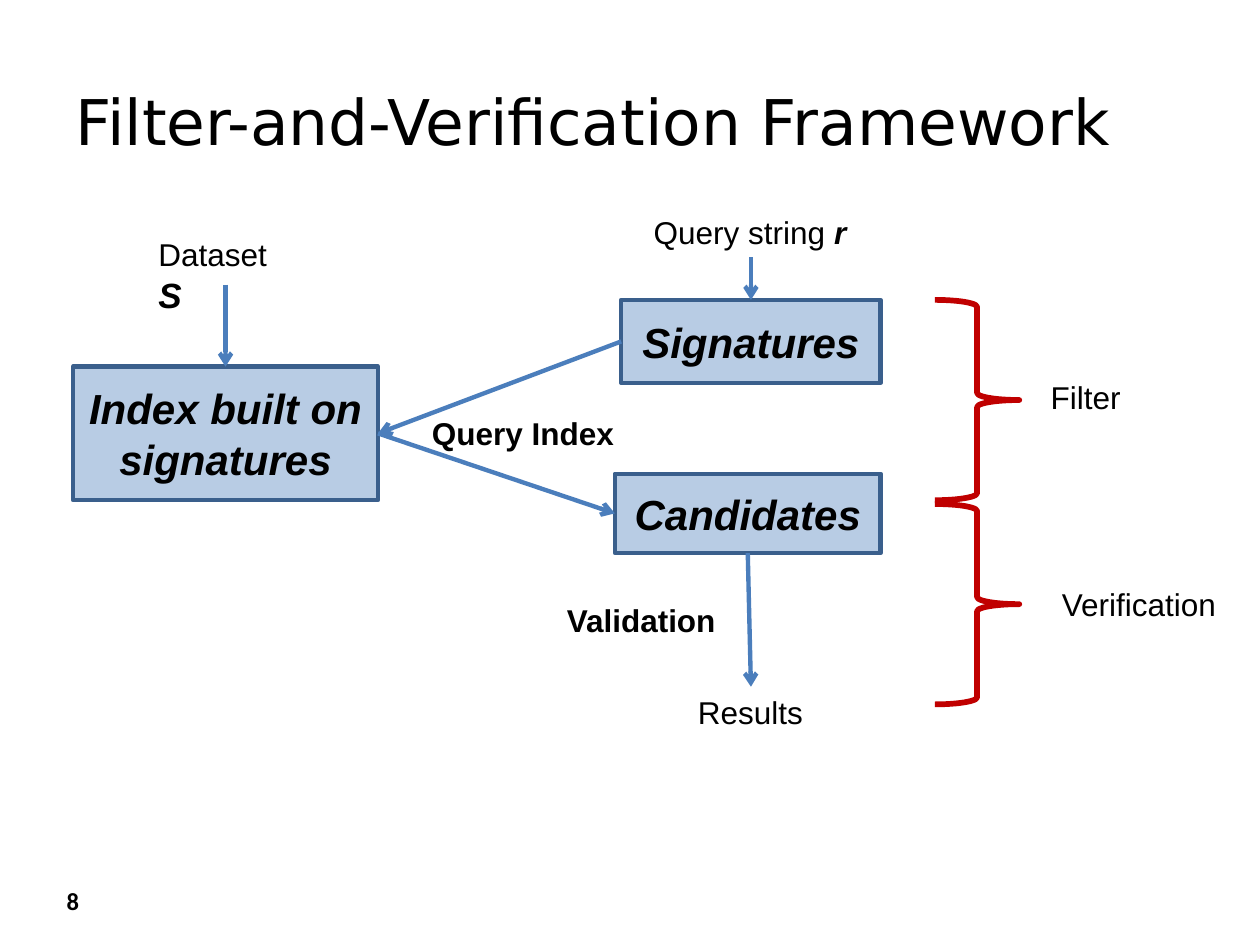
from lxml.etree import SubElement
from pptx import Presentation
from pptx.dml.color import RGBColor
from pptx.enum.shapes import MSO_CONNECTOR, MSO_SHAPE
from pptx.enum.text import MSO_ANCHOR, MSO_AUTO_SIZE, PP_ALIGN
from pptx.oxml.ns import qn
from pptx.util import Inches, Pt

COLORS = {
    "text": "000000",
    "box": "4F81BD",
    "box_edge": "3A5F8C",
    "arrow": "4B7EBC",
    "brace": "C00000",
}
TOP, LEFT, BOTTOM, RIGHT = range(4)


class DiagramSlide:
    def __init__(self, slide):
        self.slide = slide
        self.font = "Arial"

    def color(self, name):
        return RGBColor.from_string(COLORS[name])

    def style(self, font, size, name=None, bold=False, italic=False):
        font.name = name or self.font
        font.size = Pt(size)
        font.bold = bold
        font.italic = italic
        font.color.rgb = self.color("text")

    def title(self, text, *bounds):
        title = self.slide.shapes.title
        title.left, title.top, title.width, title.height = map(Inches, bounds)
        frame = title.text_frame
        frame.text = text
        frame.auto_size = MSO_AUTO_SIZE.NONE
        frame.vertical_anchor = MSO_ANCHOR.MIDDLE
        paragraph = frame.paragraphs[0]
        paragraph.alignment = PP_ALIGN.LEFT
        self.style(paragraph.font, 36, "DejaVu Sans")

    def label(self, text, *bounds, symbol="", symbol_size=18, size=18,
              name=None, bold=False):
        """Add one line of text, optionally ending in a bold italic symbol."""
        label = self.slide.shapes.add_textbox(*map(Inches, bounds))
        label.text_frame.word_wrap = False
        paragraph = label.text_frame.paragraphs[0]
        paragraph.add_run().text = text
        self.style(paragraph.font, size, name, bold)
        if symbol:
            run = paragraph.add_run()
            run.text = symbol
            self.style(run.font, symbol_size, bold=True, italic=True)
        return label

    def box(self, text, *bounds):
        box = self.slide.shapes.add_shape(MSO_SHAPE.RECTANGLE, *map(Inches, bounds))
        box.shadow.inherit = False
        box.fill.solid()
        box.fill.fore_color.rgb = self.color("box")
        fill_color = box._element.spPr.find(qn("a:solidFill")).find(qn("a:srgbClr"))
        SubElement(fill_color, qn("a:alpha"), val="40000")
        box.line.color.rgb = self.color("box_edge")
        box.line.width = Pt(2.5)
        frame = box.text_frame
        frame.text = text
        frame.word_wrap = True
        frame.vertical_anchor = MSO_ANCHOR.MIDDLE
        paragraph = frame.paragraphs[0]
        paragraph.alignment = PP_ALIGN.CENTER
        self.style(paragraph.font, 24, bold=True, italic=True)
        return box

    def arrow(self, source, source_side, target, target_side):
        arrow = self.slide.shapes.add_connector(MSO_CONNECTOR.STRAIGHT, 0, 0, 0, 0)
        arrow.begin_connect(source, source_side)
        arrow.end_connect(target, target_side)
        arrow.line.color.rgb = self.color("arrow")
        arrow.line.width = Pt(2.5)
        SubElement(arrow.line._get_or_add_ln(), qn("a:tailEnd"), type="arrow")
        SubElement(arrow._element.spPr, qn("a:effectLst"))

    def brace(self, *bounds):
        brace = self.slide.shapes.add_shape(MSO_SHAPE.RIGHT_BRACE, *map(Inches, bounds))
        brace.shadow.inherit = False
        brace.fill.background()
        brace.line.color.rgb = self.color("brace")
        brace.line.width = Pt(3.25)


def main():
    presentation = Presentation()
    presentation.slide_width = Inches(10)
    presentation.slide_height = Inches(7.5)
    title_only = presentation.slide_layouts[5]
    diagram = DiagramSlide(presentation.slides.add_slide(title_only))

    diagram.title("Filter-and-Verification Framework", 0.5, 0.52, 9, 0.87)
    diagram.label("8", 0.43, 6.98, 0.47, 0.34, size=14, name="Calibri", bold=True)

    dataset = diagram.label("Dataset ", 1.16, 1.82, 1.26, 0.44,
                            symbol="S", symbol_size=20)
    query = diagram.label("Query string ", 5.09, 1.64, 1.74, 0.4, symbol="r")
    results = diagram.label("Results", 5.44, 5.45, 1.04, 0.4)

    index = diagram.box("Index built on signatures", 0.58, 2.91, 2.42, 1.06)
    signatures = diagram.box("Signatures", 4.93, 2.38, 2.06, 0.66)
    candidates = diagram.box("Candidates", 4.88, 3.76, 2.11, 0.63)

    diagram.arrow(dataset, BOTTOM, index, TOP)
    diagram.arrow(query, BOTTOM, signatures, TOP)
    diagram.arrow(signatures, LEFT, index, RIGHT)
    diagram.arrow(index, RIGHT, candidates, LEFT)
    diagram.arrow(candidates, BOTTOM, results, TOP)
    diagram.label("Query Index", 3.33, 3.24, 1.66, 0.4, bold=True)
    diagram.label("Validation", 4.4, 4.72, 1.39, 0.4, bold=True)

    for brace_top in (2.38, 4):
        diagram.brace(7.42, brace_top, 0.67, 1.59)
    diagram.label("Filter", 8.24, 2.95, 0.76, 0.4)
    diagram.label("Verification", 8.33, 4.59, 1.44, 0.4)

    presentation.save("out.pptx")


if __name__ == "__main__":
    main()
